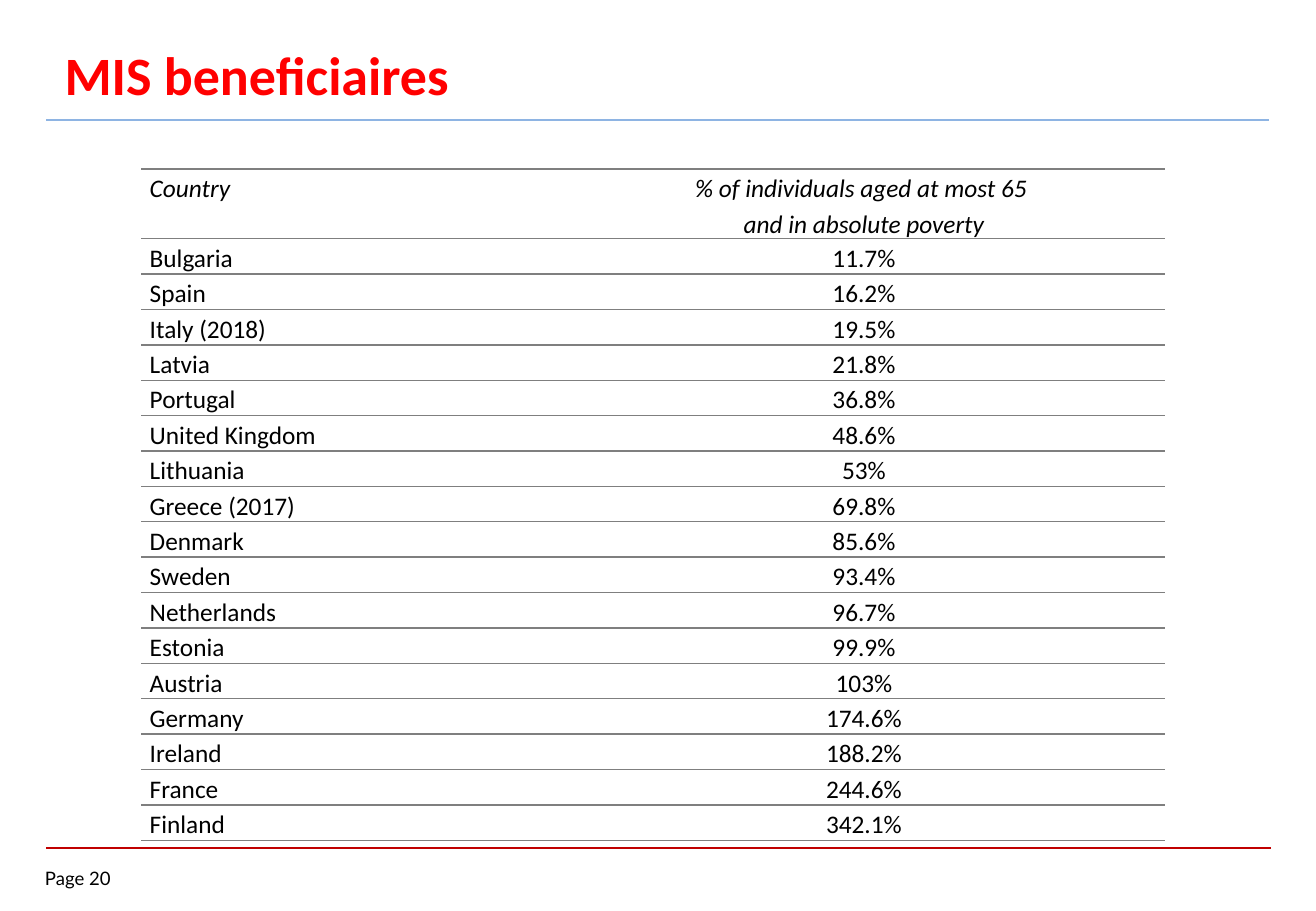
"""Build a slide with a table of MIS beneficiaries by country."""
from lxml.etree import SubElement
from pptx import Presentation
from pptx.dml.color import RGBColor
from pptx.enum.text import MSO_ANCHOR as Anchor, PP_ALIGN as Align
from pptx.oxml import parse_xml
from pptx.oxml.ns import nsdecls, qn
from pptx.util import Cm, Pt


def color(value):
    """Turn a hex string into a colour."""
    return RGBColor.from_string(value)


deck = Presentation()
deck.slide_width, deck.slide_height = Cm(27.51), Cm(19.05)
page = deck.slides.add_slide(deck.slide_layouts[6])

rules = [(17.73, 26.57, "C00000", 1), (2.51, 26.52, "8EB4E3", 1.5)]
for top, right, tint, width in rules:
    rule = page.shapes.add_connector(1, Cm(0.97), Cm(top), Cm(right), Cm(top))
    rule.line.color.rgb = color(tint)
    rule.line.width = Pt(width)
    SubElement(rule.line._get_or_add_ln().getparent(), qn("a:effectLst"))

labels = [
    ("Page 20", 0.94, 18.14, 1.85, 0.56, Anchor.TOP, "Lato", 11, "000000", False),
    ("MIS beneficiaires", 1.35, 0.74, 25.1, 1.6, Anchor.MIDDLE, "Calibri", 32, "FF0000", True),
]
for text, left, top, width, height, anchor, font, size, tint, bold in labels:
    box = page.shapes.add_textbox(Cm(left), Cm(top), Cm(width), Cm(height))
    frame = box.text_frame
    frame.word_wrap = True
    frame.vertical_anchor = anchor
    frame.margin_left = frame.margin_right = frame.margin_top = frame.margin_bottom = 0
    para = frame.paragraphs[0]
    para.text = text
    para.font.name, para.font.size, para.font.bold = font, Pt(size), bold
    para.font.color.rgb = color(tint)

rows = [
    ("Country", "% of individuals aged at most 65 \nand in absolute poverty"),
    ("Bulgaria", "11.7%"),
    ("Spain", "16.2%"),
    ("Italy (2018)", "19.5%"),
    ("Latvia", "21.8%"),
    ("Portugal", "36.8%"),
    ("United Kingdom", "48.6%"),
    ("Lithuania", "53%"),
    ("Greece (2017)", "69.8%"),
    ("Denmark", "85.6%"),
    ("Sweden", "93.4%"),
    ("Netherlands", "96.7%"),
    ("Estonia", "99.9%"),
    ("Austria", "103%"),
    ("Germany", "174.6%"),
    ("Ireland", "188.2%"),
    ("France", "244.6%"),
    ("Finland", "342.1%"),
]
header_height, row_height = 1.22, 0.74
column_widths = [8.81, 12.6]
table_height = header_height + row_height * (len(rows) - 1)
table = page.shapes.add_table(
    len(rows), 2, Cm(2.95), Cm(3.53), Cm(sum(column_widths)), Cm(table_height)
).table
table.first_row = table.horz_banding = False
for column, width in zip(table.columns, column_widths):
    column.width = Cm(width)

gray_line = '<a:solidFill><a:srgbClr val="7F7F7F"/></a:solidFill>'
borders = [("lnL", "<a:noFill/>"), ("lnR", "<a:noFill/>"), ("lnT", gray_line), ("lnB", gray_line)]
for row_index, values in enumerate(rows):
    table.rows[row_index].height = Cm(row_height if row_index else header_height)
    for column_index, value in enumerate(values):
        cell = table.cell(row_index, column_index)
        cell.margin_left = cell.margin_right = Cm(0.18)
        cell.margin_top = cell.margin_bottom = 0
        properties = cell._tc.get_or_add_tcPr()
        for side, fill in borders:
            properties.append(parse_xml(f'<a:{side} {nsdecls("a")} w="12700">{fill}</a:{side}>'))
        cell.fill.background()
        cell.text = value
        for para in cell.text_frame.paragraphs:
            para.alignment = Align.CENTER if column_index else Align.LEFT
            para.line_spacing = 1.15
            para.font.name, para.font.size = "Calibri", Pt(15)
            para.font.italic = row_index == 0
            para.font.color.rgb = color("000000")

deck.save("out.pptx")
